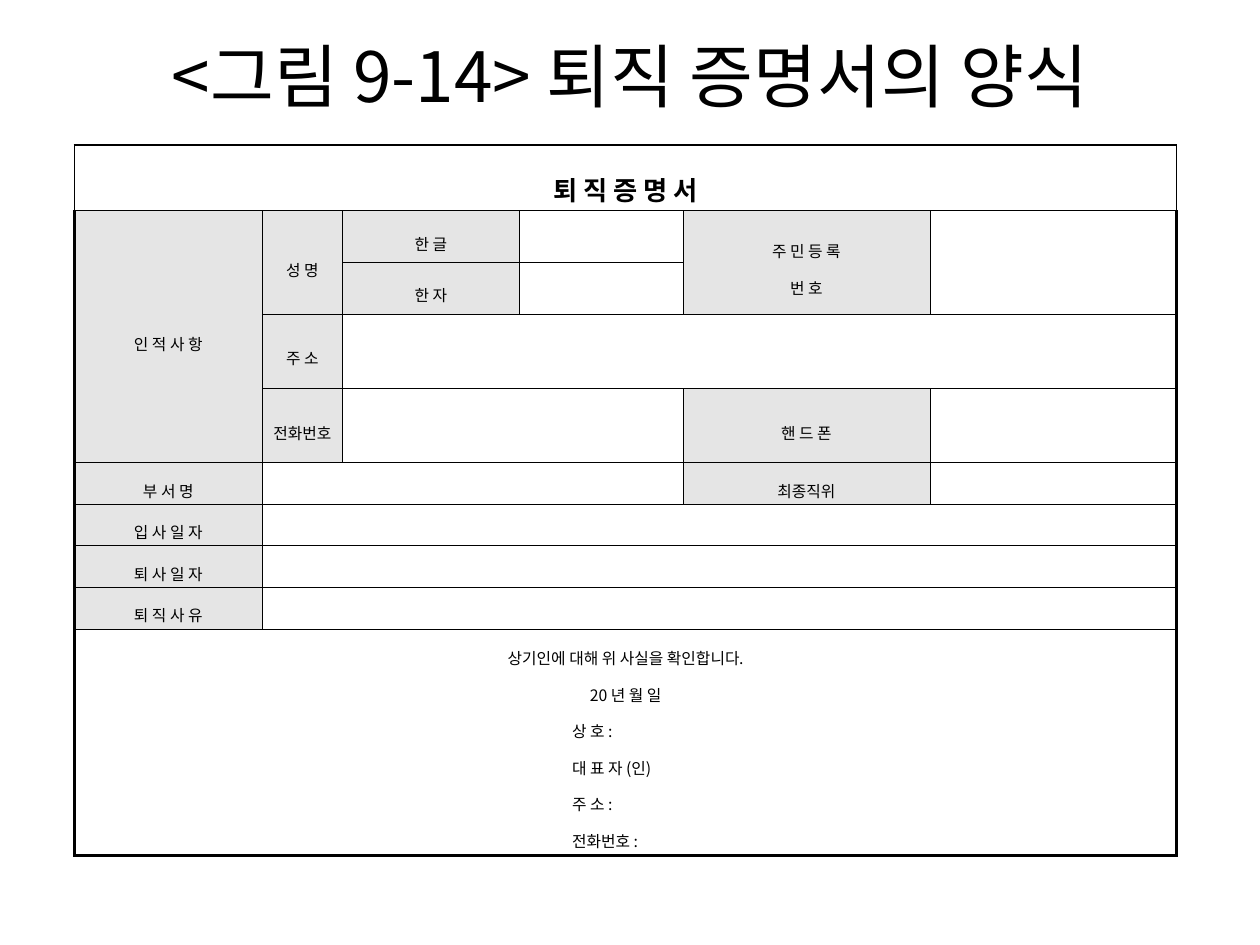
"""Build the retirement certificate form slide."""
from lxml.etree import SubElement
from pptx import Presentation
from pptx.dml.color import RGBColor
from pptx.enum.text import MSO_ANCHOR, MSO_AUTO_SIZE, PP_ALIGN
from pptx.oxml.ns import qn
from pptx.util import Inches, Pt

THEME = {
    "font": "Noto Sans CJK KR", "ink": "000000", "label": "E5E5E5", "paper": "FFFFFF",
    "title": 39.6, "head": 15, "body": 9, "thin": 0.28, "mid": 0.85, "thick": 1.7,
}
TITLE = "<그림 9-14> 퇴직 증명서의 양식\v"
COLS = [1.49, 0.64, 1.4, 1.3, 1.96, 1.96]
ROWS = [0.49] + [0.41] * 2 + [0.59] * 2 + [0.31] * 4 + [1.8]
HEAD = "퇴 직 증 명 서"
LABELS = [
    (1, 0, 4, 1, "인 적 사 항"), (1, 1, 2, 1, "성 명"), (1, 2, 1, 1, "한 글"),
    (1, 4, 2, 1, "주 민 등 록\n번 호"), (2, 2, 1, 1, "한 자"), (3, 1, 1, 1, "주 소"),
    (4, 1, 1, 1, "전화번호"), (4, 4, 1, 1, "핸 드 폰"), (5, 0, 1, 1, "부 서 명"),
    (5, 4, 1, 1, "최종직위"), (6, 0, 1, 1, "입 사 일 자"), (7, 0, 1, 1, "퇴 사 일 자"),
    (8, 0, 1, 1, "퇴 직 사 유"),
]
BLANKS = [
    (1, 3, 1, 1), (1, 5, 2, 1), (2, 3, 1, 1), (3, 2, 1, 4), (4, 2, 1, 2), (4, 5, 1, 1),
    (5, 1, 1, 3), (5, 5, 1, 1), (6, 1, 1, 5), (7, 1, 1, 5), (8, 1, 1, 5),
]
CLAIM = ["상기인에 대해 위 사실을 확인합니다.", "20 년 월 일"]
SIGN = ["상 호 :", "대 표 자 (인)", "주 소 :", "전화번호 :"]


def style(para, size, bold=False):
    font = para.font
    font.name, font.size, font.bold = THEME["font"], Pt(size), bold
    font.color.rgb = RGBColor.from_string(THEME["ink"])
    props = para._p.pPr.find(qn("a:defRPr"))
    SubElement(props, qn("a:ea")).set("typeface", THEME["font"])


def edges(row, col, high, wide):
    if row == 0:
        return [THEME["mid"]] * 4
    left = THEME["thick"] if col == 0 else THEME["thin"]
    right = THEME["thick"] if col + wide == len(COLS) else THEME["thin"]
    top = THEME["mid"] if row == 1 else THEME["thin"]
    base = THEME["thick"] if row + high == len(ROWS) else THEME["thin"]
    return [left, right, top, base]


def border(cell, widths):
    props = cell._tc.get_or_add_tcPr()
    for spot, (side, width) in enumerate(zip("LRTB", widths)):
        line = props.makeelement(qn(f"a:ln{side}"), {"w": str(Pt(width))})
        fill = SubElement(line, qn("a:solidFill"))
        SubElement(fill, qn("a:srgbClr")).set("val", THEME["ink"])
        props.insert(spot, line)


def place(table, row, col, high, wide, text="", fill="paper", size="body", bold=False):
    cell = table.cell(row, col)
    if high * wide > 1:
        cell.merge(table.cell(row + high - 1, col + wide - 1))
    for down in range(row, row + high):
        for over in range(col, col + wide):
            part = table.cell(down, over)
            part.fill.solid()
            part.fill.fore_color.rgb = RGBColor.from_string(THEME[fill])
            part.margin_left = part.margin_right = Inches(0.06)
            part.margin_top = part.margin_bottom = Inches(0.02)
            border(part, edges(row, col, high, wide))
            style(part.text_frame.paragraphs[0], THEME["body"])
    cell.vertical_anchor = MSO_ANCHOR.MIDDLE
    cell.text_frame.text = text
    for para in cell.text_frame.paragraphs:
        para.alignment = PP_ALIGN.CENTER
        para.line_spacing = 1.6 if text else 1
        style(para, THEME[size], bold)
    return cell


def main():
    deck = Presentation()
    deck.slide_width, deck.slide_height = Inches(10), Inches(7.5)
    slide = deck.slides.add_slide(deck.slide_layouts[5])

    title = slide.shapes.title
    title.left, title.top, title.width, title.height = map(Inches, (0.5, 0.3, 9, 1.25))
    frame = title.text_frame
    frame.text = TITLE
    frame.auto_size = MSO_AUTO_SIZE.NONE
    frame.vertical_anchor = MSO_ANCHOR.MIDDLE
    frame.paragraphs[0].alignment = PP_ALIGN.CENTER
    style(frame.paragraphs[0], THEME["title"])

    box = map(Inches, (0.59, 1.15, sum(COLS), sum(ROWS)))
    table = slide.shapes.add_table(len(ROWS), len(COLS), *box).table
    table.first_row = table.horz_banding = False
    for col, width in zip(table.columns, COLS):
        col.width = Inches(width)
    for row, height in zip(table.rows, ROWS):
        row.height = Inches(height)

    place(table, 0, 0, 1, len(COLS), HEAD, size="head", bold=True)
    for label in LABELS:
        place(table, *label, fill="label")
    for blank in BLANKS:
        place(table, *blank)
    last = place(table, len(ROWS) - 1, 0, 1, len(COLS), "\n".join(CLAIM + SIGN))
    for para in last.text_frame.paragraphs[len(CLAIM):]:
        para.alignment = PP_ALIGN.JUSTIFY
        para._p.pPr.set("marL", "0")
        para._p.pPr.set("indent", str(Inches(3.89)))

    deck.save("out.pptx")


if __name__ == "__main__":
    main()
